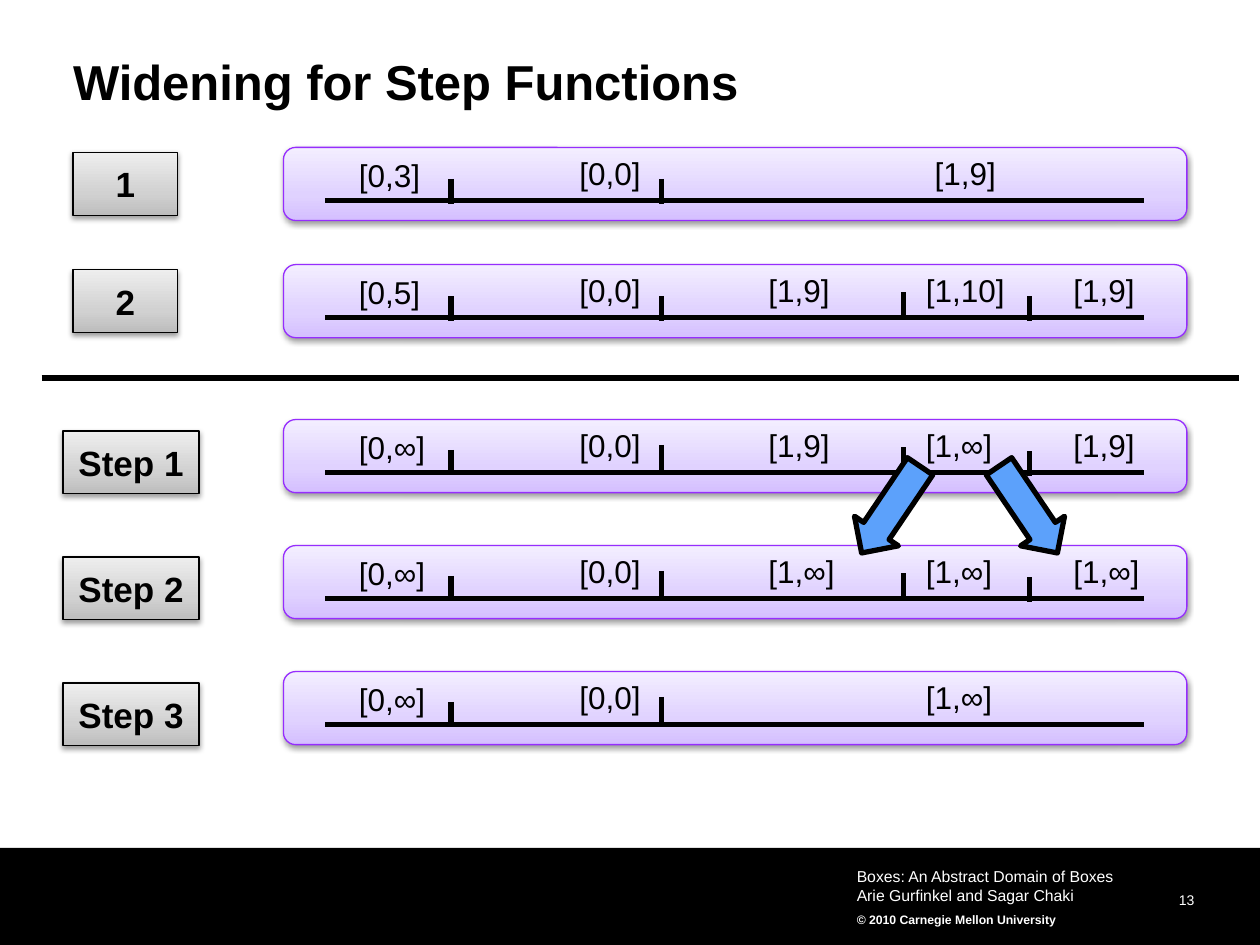
import dataclasses

import lxml.etree
import pptx
import pptx.dml.color
import pptx.enum.shapes
import pptx.enum.text
import pptx.oxml.ns
import pptx.util

Inches = pptx.util.Inches
Pt = pptx.util.Pt
qn = pptx.oxml.ns.qn
Form = pptx.enum.shapes.MSO_SHAPE
Align = pptx.enum.text.PP_ALIGN
Hold = pptx.enum.text.MSO_ANCHOR
Fit = pptx.enum.text.MSO_AUTO_SIZE


@dataclasses.dataclass(frozen=True)
class Theme:
    font: str = "Arial"
    black: str = "000000"
    white: str = "FFFFFF"
    blue: str = "5CA1FB"
    edge: str = "962DFE"
    # Gradient stops run from bottom to top
    purple: tuple = ((0, "D4BFFF"), (35, "E0D2FF"), (100, "F3EEFF"))
    grey: tuple = ((0, "BDBDBD"), (35, "D1D1D1"), (100, "EEEEEE"))
    title: int = 28
    label: int = 20
    value: int = 18
    foot: int = 9
    page: int = 8
    rights: int = 7
    thin: float = 0.75
    thick: int = 3


def tint(code):
    return pptx.dml.color.RGBColor.from_string(code)


class Painter:
    def __init__(self, slide, theme):
        self.slide = slide
        self.theme = theme

    def say(self, para, text, size, color=None, bold=False):
        run = para.add_run()
        run.text = text
        font = run.font
        font.name = self.theme.font
        font.size = Pt(size)
        font.bold = bold
        font.color.rgb = tint(color or self.theme.black)

    def frame(self, shape, inset, anchor=Hold.TOP, wrap=True, fit=Fit.NONE):
        frame = shape.text_frame
        frame.margin_left = frame.margin_right = Inches(inset)
        frame.margin_top = frame.margin_bottom = Inches(inset)
        frame.vertical_anchor = anchor
        frame.word_wrap = wrap
        frame.auto_size = fit
        return frame

    def title(self, text, box):
        shape = self.slide.shapes.title
        shape.left, shape.top, shape.width, shape.height = map(Inches, box)
        para = self.frame(shape, 0).paragraphs[0]
        para.alignment = Align.LEFT
        para.line_spacing = 0.9
        self.say(para, text, self.theme.title, bold=True)

    def shape(self, group, form, box, fill, line=None, width=None):
        shape = group.add_shape(form, *map(Inches, box))
        shape.shadow.inherit = False
        if isinstance(fill, tuple):
            self.blend(shape, fill)
        else:
            shape.fill.solid()
            shape.fill.fore_color.rgb = tint(fill)
        if line:
            shape.line.color.rgb = tint(line)
            shape.line.width = Pt(width)
        else:
            shape.line.fill.background()
        return shape

    def blend(self, shape, stops):
        """Fill with a vertical gradient and add a soft shadow."""
        shape.fill.gradient()
        shape.fill.gradient_angle = 90
        props = shape._element.spPr
        holder = props.find(qn("a:gradFill")).find(qn("a:gsLst"))
        for stop in list(holder):
            holder.remove(stop)
        for place, code in stops:
            stop = lxml.etree.SubElement(holder, qn("a:gs"), pos=str(place * 1000))
            lxml.etree.SubElement(stop, qn("a:srgbClr"), val=code)
        shade = lxml.etree.SubElement(
            props.find(qn("a:effectLst")), qn("a:outerShdw"),
            blurRad="40000", dist="20000", dir="5400000", rotWithShape="0")
        color = lxml.etree.SubElement(shade, qn("a:srgbClr"), val=self.theme.black)
        lxml.etree.SubElement(color, qn("a:alpha"), val="38000")

    def line(self, group, *ends):
        kind = pptx.enum.shapes.MSO_CONNECTOR.STRAIGHT
        line = group.add_connector(kind, *map(Inches, ends))
        line.line.color.rgb = tint(self.theme.black)
        line.line.width = Pt(self.theme.thick)
        lxml.etree.SubElement(line._element.spPr, qn("a:effectLst"))

    def value(self, group, text, left, top):
        wide = 0.73 if "∞" in text else 0.69 if len(text) == 5 else 0.83
        box = group.add_textbox(*map(Inches, (left, top, wide, 0.4)))
        frame = box.text_frame
        frame.word_wrap = False
        frame.auto_size = Fit.SHAPE_TO_FIT_TEXT
        self.say(frame.paragraphs[0], text, self.theme.value)

    def label(self, text, box):
        theme = self.theme
        shape = self.shape(self.slide.shapes, Form.RECTANGLE, box,
                           theme.grey, theme.black, theme.thin)
        para = self.frame(shape, 0, Hold.MIDDLE, wrap=False).paragraphs[0]
        para.alignment = Align.CENTER
        self.say(para, text, theme.label, bold=True)

    def band(self, top, ticks, values):
        """Draw one step function: panel, axis, ticks and values."""
        theme = self.theme
        group = self.slide.shapes.add_group_shape().shapes
        self.shape(group, Form.ROUNDED_RECTANGLE, (2.25, top, 7.17, 0.58),
                   theme.purple, theme.edge, theme.thin)
        self.line(group, 2.58, top + 0.42, 9.08, top + 0.42)
        for left, drop in ticks:
            self.line(group, left, top + drop, left, top + drop + 0.2)
        for index, (text, left) in enumerate(values):
            self.value(group, text, left, top + (0 if index else 0.02))

    def arrow(self, left, turn, flip=False):
        theme = self.theme
        shape = self.shape(self.slide.shapes, Form.DOWN_ARROW,
                           (left, 3.63, 0.42, 0.83), theme.blue,
                           theme.black, theme.thick)
        shape.adjustments[0] = 0.58
        shape.adjustments[1] = 0.5
        shape.rotation = turn
        if flip:
            shape._element.spPr.find(qn("a:xfrm")).set("flipH", "1")

    def footer(self, lines, page):
        theme = self.theme
        shapes = self.slide.shapes
        self.shape(shapes, Form.RECTANGLE, (0, 6.73, 10, 0.77), theme.black)
        box = shapes.add_textbox(*map(Inches, (8.56, 7.03, 0.92, 0.18)))
        para = self.frame(box, 0, Hold.MIDDLE).paragraphs[0]
        para.alignment = Align.RIGHT
        para.line_spacing = Pt(13)
        self.say(para, page, theme.page, theme.white)
        box = shapes.add_textbox(*map(Inches, (6.75, 6.83, 2.5, 0.58)))
        frame = self.frame(box, 0.05, Hold.MIDDLE)
        for index, text in enumerate(lines):
            para = frame.add_paragraph() if index else frame.paragraphs[0]
            last = index == len(lines) - 1
            if last:
                para.line_spacing = 1.5
            self.say(para, text, theme.rights if last else theme.foot,
                     theme.white, last)


def main():
    deck = pptx.Presentation()
    deck.slide_width, deck.slide_height = Inches(10), Inches(7.5)
    pen = Painter(deck.slides.add_slide(deck.slide_layouts[5]), Theme())

    # Footer and title
    pen.footer(("Boxes: An Abstract Domain of Boxes",
                "Arie Gurfinkel and Sagar Chaki",
                "© 2010 Carnegie Mellon University"), "13")
    pen.title("Widening for Step Functions", (0.58, 0.46, 8.92, 0.42))

    # Tick places and drops, and the left edges of the values
    high = ((3.58, 0.25), (5.25, 0.25))
    low = ((3.58, 0.24), (5.25, 0.2))
    extra = ((7.17, 0.22), (8.17, 0.25))
    three, five = (2.75, 4.5, 7.25), (2.75, 4.5, 6, 7.25, 8.42)

    # Inputs above the rule, widening steps below
    rows = (
        ("1", 1.17, high, (2.75, 4.5, 7.32), "[0,3] [0,0] [1,9]"),
        ("2", 2.1, high + extra, five, "[0,5] [0,0] [1,9] [1,10] [1,9]"),
        ("Step 1", 3.33, low + extra, five, "[0,∞] [0,0] [1,9] [1,∞] [1,9]"),
        ("Step 2", 4.33, low + extra, five, "[0,∞] [0,0] [1,∞] [1,∞] [1,∞]"),
        ("Step 3", 5.33, low, three, "[0,∞] [0,0] [1,∞]"),
    )
    for name, top, ticks, lefts, texts in rows:
        pen.band(top, ticks, zip(texts.split(), lefts))
        step = len(name) > 1
        pen.label(name, (0.5, top + 0.09, 1.08, 0.5) if step
                  else (0.58, top + 0.04, 0.83, 0.5))
    pen.line(pen.slide.shapes, 0.33, 3, 9.83, 3)

    # Arrows from step 1 to step 2
    pen.arrow(6.86, 34)
    pen.arrow(7.95, 326, flip=True)
    deck.save("out.pptx")


if __name__ == "__main__":
    main()
